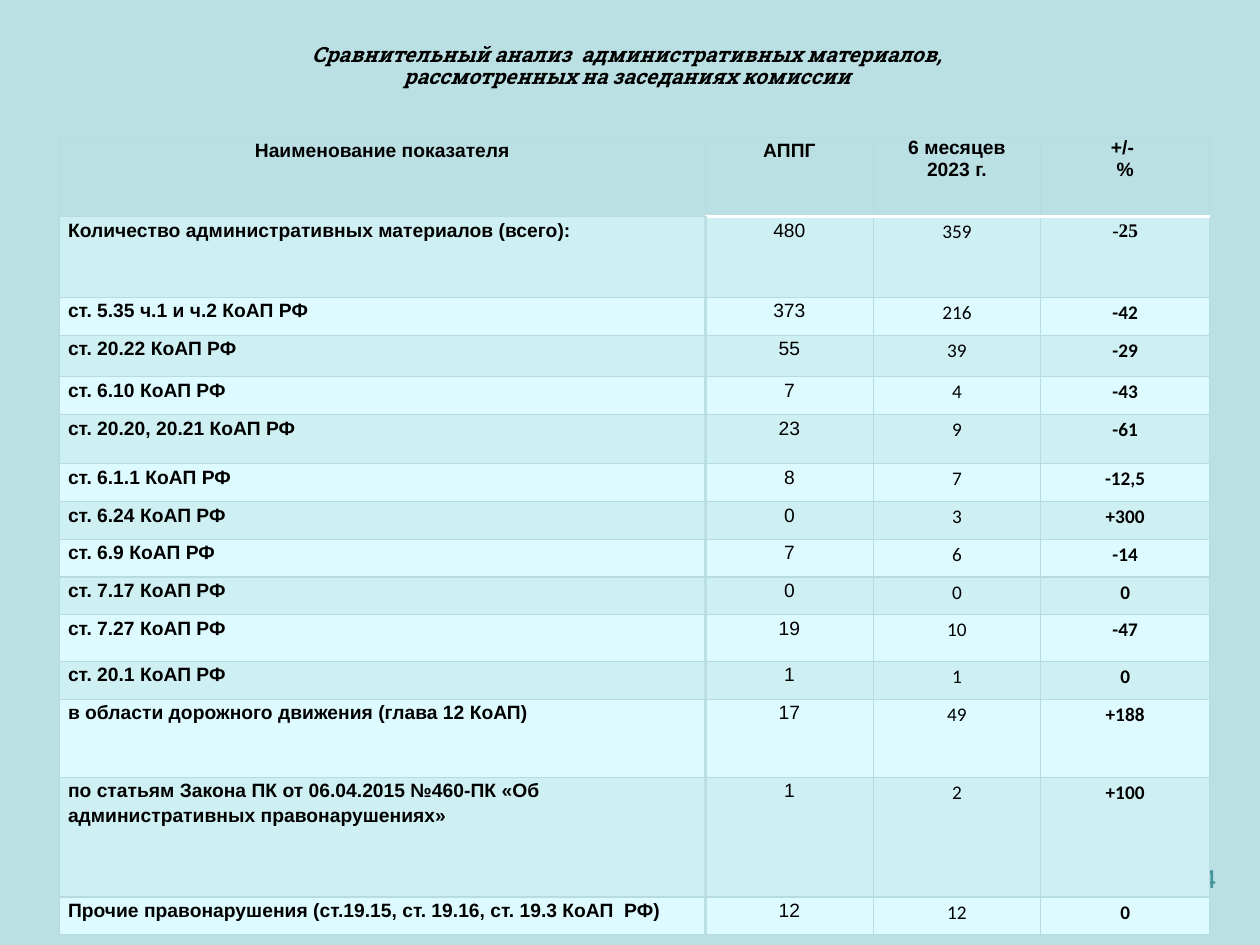
"""Build a slide comparing administrative cases reviewed by the commission."""
from lxml import etree
from pptx import Presentation
from pptx import util as u
from pptx.dml.color import RGBColor
from pptx.enum import text
from pptx.oxml import ns

BLACK = RGBColor(0x00, 0x00, 0x00)
WHITE = RGBColor(0xFF, 0xFF, 0xFF)
TEAL = RGBColor(0x41, 0x96, 0x9D)
BACKGROUND = RGBColor(0xBB, 0xE0, 0xE3)
GRID = RGBColor(0xB6, 0xDC, 0xDF)
BANDS = (RGBColor(0xDD, 0xFB, 0xFF), RGBColor(0xCF, 0xF0, 0xF3))

TITLE = "Сравнительный анализ  административных материалов, \vрассмотренных на заседаниях комиссии "
PAGE_NUMBER = "4"
HEADER = ("Наименование показателя", "АППГ", "6 месяцев\n2023 г.", "+/- \n%")
ROWS = [
    (0.64, "Количество административных материалов (всего):", "480", "359", "-25"),
    (0.30, "ст. 5.35 ч.1 и ч.2 КоАП РФ", "373", "216", "-42"),
    (0.33, "ст. 20.22 КоАП РФ", "55", "39", "-29"),
    (0.30, "ст. 6.10 КоАП РФ", "7", "4", "-43"),
    (0.39, "ст. 20.20, 20.21 КоАП РФ", "23", "9", "-61"),
    (0.30, "ст. 6.1.1 КоАП РФ", "8", "7", "-12,5"),
    (0.30, "ст. 6.24 КоАП РФ", "0", "3", "+300"),
    (0.30, "ст. 6.9 КоАП РФ", "7", "6", "-14"),
    (0.30, "ст. 7.17 КоАП РФ", "0", "0", "0"),
    (0.37, "ст. 7.27 КоАП РФ", "19", "10", "-47"),
    (0.30, "ст. 20.1 КоАП РФ", "1", "1", "0"),
    (0.62, "в области дорожного движения (глава 12 КоАП)", "17", "49", "+188"),
    (0.95, "по статьям Закона ПК от 06.04.2015 №460-ПК «Об административных правонарушениях»",
     "1", "2", "+100"),
    (0.30, "Прочие правонарушения (ст.19.15, ст. 19.16, ст. 19.3 КоАП  РФ)", "12", "12", "0"),
]
HEADER_HEIGHT = 0.63
COLUMN_WIDTHS = (5.13, 1.33, 1.33, 1.34)
COLUMN_FONTS = (("Arial", True), ("Arial", False), ("Calibri", False), ("Calibri", True))
TOTAL_CHANGE_FONT = ("Times New Roman", True)
LEFT_ALIGNED_ROWS = (2, 13)


def set_all(target, values):
    for name, value in values.items():
        setattr(target, name, value)


def format_paragraph(paragraph, size, name, color, alignment, **styles):
    paragraph.alignment = alignment
    set_all(paragraph.font, {"size": u.Pt(size), "name": name, **styles})
    paragraph.font.color.rgb = color


def set_borders(cell, row, column):
    borders = {side: (GRID, 0.75) for side in "LRTB"}
    if column and row < 2:
        borders["T" if row else "B"] = (WHITE, 2)
    if row and column < 2:
        borders["L" if column else "R"] = (BACKGROUND, 2)
    properties = cell._tc.get_or_add_tcPr()
    for side, (color, width) in borders.items():
        line = etree.SubElement(properties, ns.qn(f"a:ln{side}"), w=str(u.Pt(width)))
        fill = etree.SubElement(line, ns.qn("a:solidFill"))
        etree.SubElement(fill, ns.qn("a:srgbClr"), val=str(color))


def fill_cell(cell, content, row, column):
    set_borders(cell, row, column)
    cell.fill.solid()
    cell.fill.fore_color.rgb = BANDS[row % 2] if row else BACKGROUND
    set_all(cell, {"margin_left": u.Inches(0.07), "margin_right": u.Inches(0.07),
                   "margin_top": 0, "margin_bottom": 0,
                   "vertical_anchor": text.MSO_ANCHOR.TOP})
    name, bold = COLUMN_FONTS[column] if row else ("Arial", True)
    if (row, column) == (1, 3):
        name, bold = TOTAL_CHANGE_FONT
    alignment = text.PP_ALIGN.CENTER
    if row and column == 0:
        alignment = text.PP_ALIGN.LEFT if row in LEFT_ALIGNED_ROWS else text.PP_ALIGN.JUSTIFY
    cell.text_frame.text = content
    for paragraph in cell.text_frame.paragraphs:
        if "\n" not in content:
            set_all(paragraph, {"line_spacing": 1.15, "space_after": u.Pt(10)})
        format_paragraph(paragraph, 11, name, BLACK, alignment, bold=bold)


def add_title(slide):
    title = slide.shapes.title
    set_all(title, {"left": u.Inches(0.5), "top": u.Inches(0.3),
                    "width": u.Inches(9), "height": u.Inches(1.25)})
    frame = title.text_frame
    frame.text = TITLE
    set_all(frame, {"vertical_anchor": text.MSO_ANCHOR.TOP, "word_wrap": True,
                    "auto_size": text.MSO_AUTO_SIZE.NONE})
    paragraph = frame.paragraphs[0]
    paragraph.line_spacing = 0.9
    format_paragraph(paragraph, 12, "Roboto Slab", BLACK, text.PP_ALIGN.CENTER,
                     bold=True, italic=True)


def add_page_number(slide):
    box = slide.shapes.add_textbox(u.Inches(7.42), u.Inches(6.81), u.Inches(2.33), u.Inches(0.52))
    box.text_frame.word_wrap = True
    box.text_frame.text = PAGE_NUMBER
    format_paragraph(box.text_frame.paragraphs[0], 14, "Lato", TEAL, text.PP_ALIGN.RIGHT, bold=True)


def add_case_table(slide):
    heights = [HEADER_HEIGHT] + [row[0] for row in ROWS]
    contents = [HEADER] + [row[1:] for row in ROWS]
    frame = slide.shapes.add_table(len(contents), len(HEADER), u.Inches(0.47), u.Inches(1.09),
                                   u.Inches(sum(COLUMN_WIDTHS)), u.Inches(sum(heights)))
    table = frame.table
    set_all(table, {"first_row": False, "horz_banding": False})
    for column, width in zip(table.columns, COLUMN_WIDTHS):
        column.width = u.Inches(width)
    for row, (height, values) in enumerate(zip(heights, contents)):
        table.rows[row].height = u.Inches(height)
        for column, content in enumerate(values):
            fill_cell(table.cell(row, column), content, row, column)


def main():
    presentation = Presentation()
    set_all(presentation, {"slide_width": u.Inches(10), "slide_height": u.Inches(7.5)})
    slide = presentation.slides.add_slide(presentation.slide_layouts[5])
    slide.background.fill.solid()
    slide.background.fill.fore_color.rgb = BACKGROUND
    add_title(slide)
    add_page_number(slide)
    add_case_table(slide)
    presentation.save("out.pptx")


if __name__ == "__main__":
    main()
